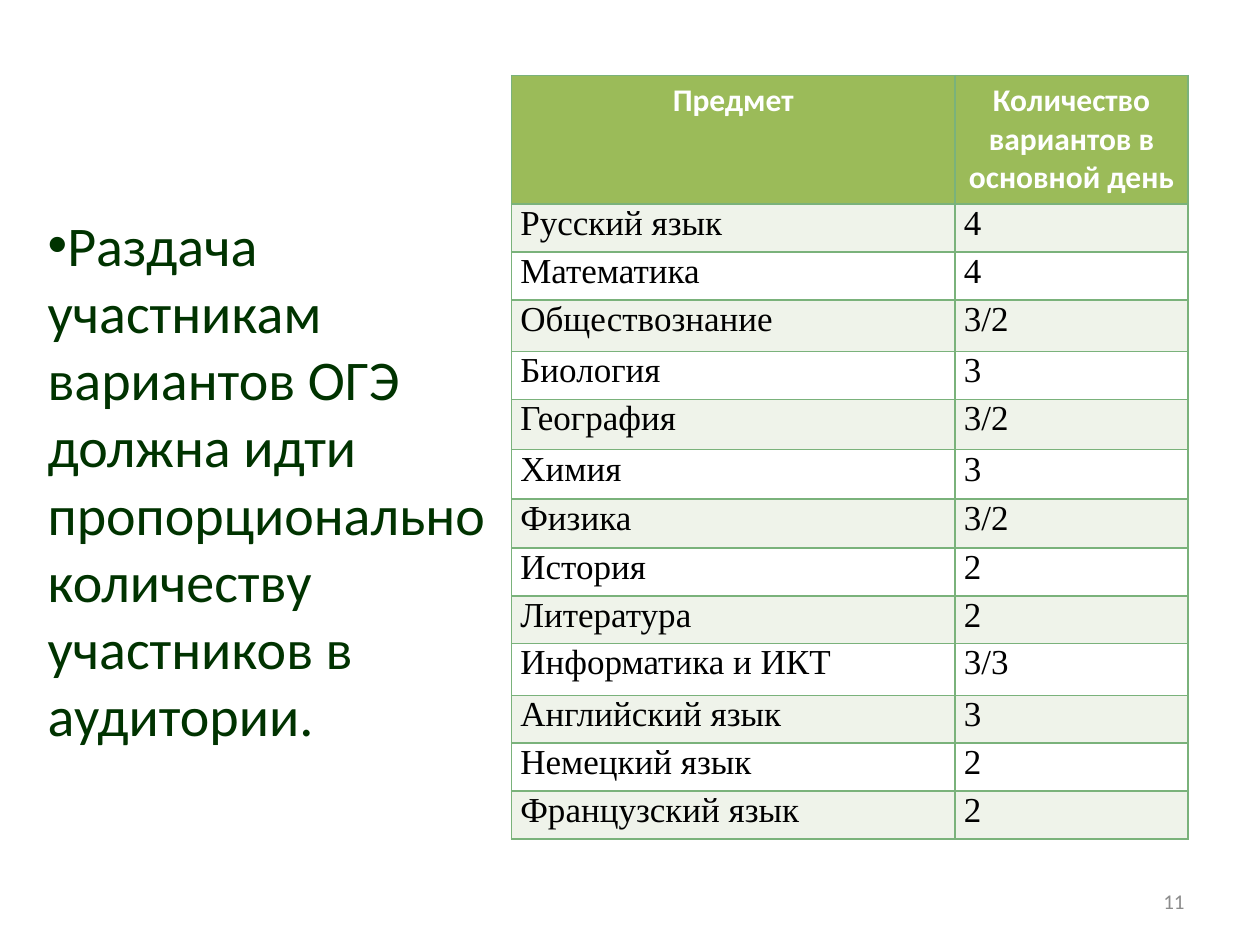
from dataclasses import dataclass

from lxml.etree import SubElement
from pptx import Presentation
from pptx.dml.color import RGBColor
from pptx.enum.text import MSO_ANCHOR as Anchor, PP_ALIGN as Align
from pptx.oxml.ns import qn
from pptx.util import Inches, Pt


@dataclass(frozen=True)
class Style:
    font: str
    size: int
    color: str
    bold: bool = False
    align: Align = Align.LEFT


@dataclass(frozen=True)
class Subject:
    name: str
    variants: str
    height: float = 0.38


HEADER = Style("Calibri", 18, "FFFFFF", True, Align.CENTER)
ENTRY = Style("Times New Roman", 20, "000000")
BODY = Style("Calibri", 32, "003300")
NUMBER = Style("Calibri", 12, "8C8C8C", align=Align.RIGHT)
BORDER_COLOR = "7AB27B"
HEADER_FILL = "9BBB59"
BAND_FILLS = ("EFF3EA", "FFFFFF")
COLUMN_WIDTHS = (3.52, 1.85)

HEADINGS = Subject("Предмет", "Количество вариантов в основной день", 1.02)
SUBJECTS = [
    Subject("Русский язык", "4"),
    Subject("Математика", "4"),
    Subject("Обществознание", "3/2", 0.41),
    Subject("Биология", "3"),
    Subject("География", "3/2", 0.4),
    Subject("Химия", "3", 0.39),
    Subject("Физика", "3/2", 0.39),
    Subject("История", "2"),
    Subject("Литература", "2"),
    Subject("Информатика и ИКТ", "3/3", 0.41),
    Subject("Английский язык", "3"),
    Subject("Немецкий язык", "2"),
    Subject("Французский язык", "2"),
]


def rgb(color: str) -> RGBColor:
    return RGBColor.from_string(color)


def write(frame, text: str, style: Style) -> None:
    frame.text = text
    para = frame.paragraphs[0]
    para.alignment = style.align
    span = para.runs[0]
    span.font.name = style.font
    span.font.size = Pt(style.size)
    span.font.bold = style.bold
    span.font.color.rgb = rgb(style.color)


def add_text(page, left: float, top: float, width: float, height: float,
             text: str, style: Style, anchor: Anchor = Anchor.TOP):
    box = page.shapes.add_textbox(Inches(left), Inches(top), Inches(width), Inches(height))
    box.text_frame.word_wrap = True
    box.text_frame.vertical_anchor = anchor
    write(box.text_frame, text, style)
    return box


def add_bullet(para) -> None:
    properties = para._p.get_or_add_pPr()
    properties.set("marL", "0")
    properties.set("indent", "0")
    SubElement(properties, qn("a:buFont"), typeface="Arial")
    SubElement(properties, qn("a:buChar"), char="•")


def add_borders(cell) -> None:
    properties = cell._tc.get_or_add_tcPr()
    for side in ("lnL", "lnR", "lnT", "lnB"):
        line = SubElement(properties, qn(f"a:{side}"), w=str(Pt(1)))
        fill = SubElement(line, qn("a:solidFill"))
        SubElement(fill, qn("a:srgbClr"), val=BORDER_COLOR)


def fill_row(table, index: int, subject: Subject, style: Style, color: str) -> None:
    table.rows[index].height = Inches(subject.height)
    for cell, text in zip(table.rows[index].cells, (subject.name, subject.variants)):
        add_borders(cell)
        cell.fill.solid()
        cell.fill.fore_color.rgb = rgb(color)
        if style is ENTRY:
            cell.margin_left = cell.margin_right = Inches(0.07)
            cell.margin_top = cell.margin_bottom = 0
        write(cell.text_frame, text, style)


def add_subject_table(page) -> None:
    height = HEADINGS.height + sum(subject.height for subject in SUBJECTS)
    table = page.shapes.add_table(
        len(SUBJECTS) + 1, len(COLUMN_WIDTHS), Inches(4.06), Inches(0.6),
        Inches(sum(COLUMN_WIDTHS)), Inches(height)).table
    for column, width in zip(table.columns, COLUMN_WIDTHS):
        column.width = Inches(width)
    fill_row(table, 0, HEADINGS, HEADER, HEADER_FILL)
    for index, subject in enumerate(SUBJECTS):
        fill_row(table, index + 1, subject, ENTRY, BAND_FILLS[index % 2])


def main() -> None:
    deck = Presentation()
    deck.slide_width, deck.slide_height = Inches(10), Inches(7.5)
    page = deck.slides.add_slide(deck.slide_layouts[6])
    add_subject_table(page)
    advice = add_text(
        page, 0.28, 1.62, 3.79, 5.13,
        "Раздача участникам вариантов ОГЭ должна идти пропорционально "
        "количеству участников в аудитории.", BODY)
    add_bullet(advice.text_frame.paragraphs[0])
    add_text(page, 7.17, 6.95, 2.33, 0.4, "11", NUMBER, Anchor.MIDDLE)
    deck.save("out.pptx")


if __name__ == "__main__":
    main()
